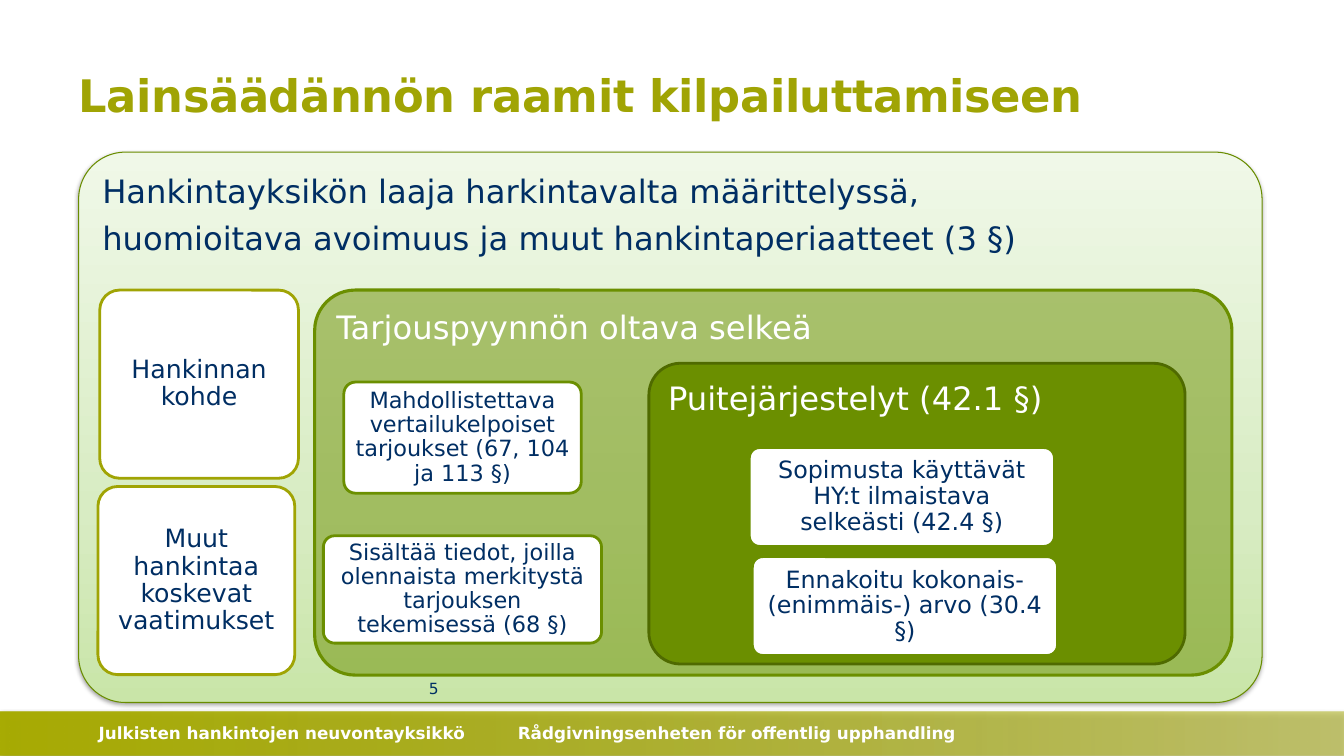
import pptx
import pptx.dml.color
import pptx.enum.shapes
import pptx.enum.text
import pptx.oxml
import pptx.oxml.ns
import pptx.util

Pt = pptx.util.Pt
qn = pptx.oxml.ns.qn
ALIGN = pptx.enum.text.PP_ALIGN
ANCHOR = pptx.enum.text.MSO_ANCHOR
KIND = pptx.enum.shapes.MSO_SHAPE

FONT = "DejaVu Sans"
HEX = {
    "olive": "A0A404", "bar": "A8AC04", "green": "6B8F00", "dark": "4F6A00",
    "edge": "698C00", "navy": "002E63", "white": "FFFFFF", "black": "000000",
    "low": "C9E5A8", "mid": "D8ECC3", "top": "F0F8E8",
}


def rgb(name):
    return pptx.dml.color.RGBColor.from_string(HEX[name])


def node(parent, tag, **attrs):
    child = parent.makeelement(qn(tag), {k: str(v) for k, v in attrs.items()})
    parent.append(child)
    return child


def tint(parent, name, alpha):
    """Add a colour with its opacity in percent."""
    color = node(parent, "a:srgbClr", val=HEX[name])
    if alpha < 100:
        node(color, "a:alpha", val=alpha * 1000)


def grade(shape, angle, stops):
    """Fill with a gradient of (position, colour, opacity) stops."""
    shape.fill.gradient()
    grad = shape._element.spPr.find(qn("a:gradFill"))
    for child in list(grad):
        grad.remove(child)
    group = node(grad, "a:gsLst")
    for pos, name, alpha in stops:
        tint(node(group, "a:gs", pos=pos * 1000), name, alpha)
    node(grad, "a:lin", ang=angle * 60000, scaled=0)


def shade(shape, alpha):
    """Add a soft shadow straight below."""
    effects = shape._element.spPr.find(qn("a:effectLst"))
    outer = node(effects, "a:outerShdw", blurRad=Pt(3.1), dist=Pt(1.7),
                 dir=90 * 60000, rotWithShape=0)
    tint(outer, "black", alpha)


def write(shape, lines, size, color, bold=False, align=ALIGN.LEFT,
          anchor=ANCHOR.TOP, inset=(7.2, 7.2), lead=None, after=0, track=0):
    frame = shape.text_frame
    frame.word_wrap = True
    frame.vertical_anchor = anchor
    frame.margin_left = frame.margin_right = Pt(inset[0])
    frame.margin_top = frame.margin_bottom = Pt(inset[1])
    for i, line in enumerate(lines):
        para = frame.add_paragraph() if i else frame.paragraphs[0]
        para.alignment = align
        if lead:
            para.line_spacing = lead
        para.space_after = Pt(after)
        run = para.add_run()
        run.text = line
        run.font.name = FONT
        run.font.size = Pt(size)
        run.font.bold = bold
        run.font.color.rgb = rgb(color)
        if track:
            run._r.get_or_add_rPr().set("spc", str(track))


def label(slide, spot, text, size, color, **style):
    box = slide.shapes.add_textbox(*map(Pt, spot))
    write(box, [text], size, color, **style)


def block(slide, spot, fill=None, line=None, width=2, bend=0.105, alpha=100):
    kind = KIND.ROUNDED_RECTANGLE if bend else KIND.RECTANGLE
    shape = slide.shapes.add_shape(kind, *map(Pt, spot))
    shape.shadow.inherit = False
    if bend:
        shape.adjustments[0] = bend
    if fill:
        shape.fill.solid()
        shape.fill.fore_color.rgb = rgb(fill)
        if alpha < 100:
            color = shape._element.spPr.find(qn("a:solidFill"))[0]
            node(color, "a:alpha", val=alpha * 1000)
    if line:
        shape.line.color.rgb = rgb(line)
        shape.line.width = Pt(width)
    else:
        shape.line.fill.background()
    return shape


def panel(slide, spot, lines, color, **look):
    shape = block(slide, spot, **look)
    write(shape, lines, 23, color, lead=0.9, after=8.5)
    return shape


def card(slide, spot, text, size, line):
    shape = block(slide, spot, "white", line)
    write(shape, [text], size, "navy", align=ALIGN.CENTER,
          anchor=ANCHOR.MIDDLE, inset=(5, 5), lead=0.9)


def footer(slide):
    bar = block(slide, (0, 508.3, 960, 31.7), bend=0)
    grade(bar, 0, [(0, "bar", 100), (99, "bar", 50)])
    shade(bar, 35)
    for left, text in ((63.4, "Julkisten hankintojen neuvontayksikkö"),
                       (362.8, "Rådgivningsenheten för offentlig upphandling")):
        label(slide, (left, 512.6, 400, 21.6), text, 12, "white",
              bold=True, inset=(7.2, 3.6))


def main():
    deck = pptx.Presentation()
    deck.slide_width, deck.slide_height = Pt(960), Pt(540)
    slide = deck.slides.add_slide(deck.slide_layouts[6])

    footer(slide)

    # Outer frame
    frame = panel(slide, (56.2, 108.7, 845.3, 393.1),
                  ["Hankintayksikön laaja harkintavalta määrittelyssä,",
                   "huomioitava avoimuus ja muut hankintaperiaatteet (3 §)"],
                  "navy", line="edge", width=0.75, bend=0.085)
    grade(frame, 270, [(0, "low", 100), (35, "mid", 100), (100, "top", 100)])
    shade(frame, 38)

    # Left column
    card(slide, (71.3, 207.2, 141.9, 134.4), "Hankinnan kohde", 18, "olive")
    card(slide, (70, 347.5, 140.6, 134.4),
         "Muut hankintaa koskevat vaatimukset", 18, "olive")

    # Call for tenders
    panel(slide, (224.8, 207.2, 655.2, 275), ["Tarjouspyynnön oltava selkeä"],
          "white", fill="green", line="green", width=2.25, alpha=50)
    card(slide, (245.6, 272.9, 169.6, 79.4),
         "Mahdollistettava vertailukelpoiset tarjoukset (67, 104 ja 113 §)",
         16, "green")
    card(slide, (231, 382.7, 198.7, 76.7),
         "Sisältää tiedot, joilla olennaista merkitystä tarjouksen "
         "tekemisessä (68 §)", 16, "green")

    # Framework agreements
    panel(slide, (463.5, 259.5, 383, 214.8), ["Puitejärjestelyt (42.1 §)"],
          "white", fill="green", line="dark")
    card(slide, (535.2, 319.7, 218, 70.6),
         "Sopimusta käyttävät HY:t ilmaistava selkeästi (42.4 §)", 17, "green")
    card(slide, (537.4, 397.6, 218, 70.6),
         "Ennakoitu kokonais- (enimmäis-) arvo (30.4 §)", 17, "green")

    # Title and slide number
    label(slide, (56.2, 25.2, 816.5, 64.8),
          "Lainsäädännön raamit kilpailuttamiseen", 32, "olive", bold=True,
          anchor=ANCHOR.BOTTOM, inset=(0, 3.6), track=-30)
    label(slide, (289.4, 481, 41, 20.9), "5", 11, "navy",
          align=ALIGN.CENTER, anchor=ANCHOR.MIDDLE, inset=(0, 0))

    deck.save("out.pptx")


if __name__ == "__main__":
    main()
